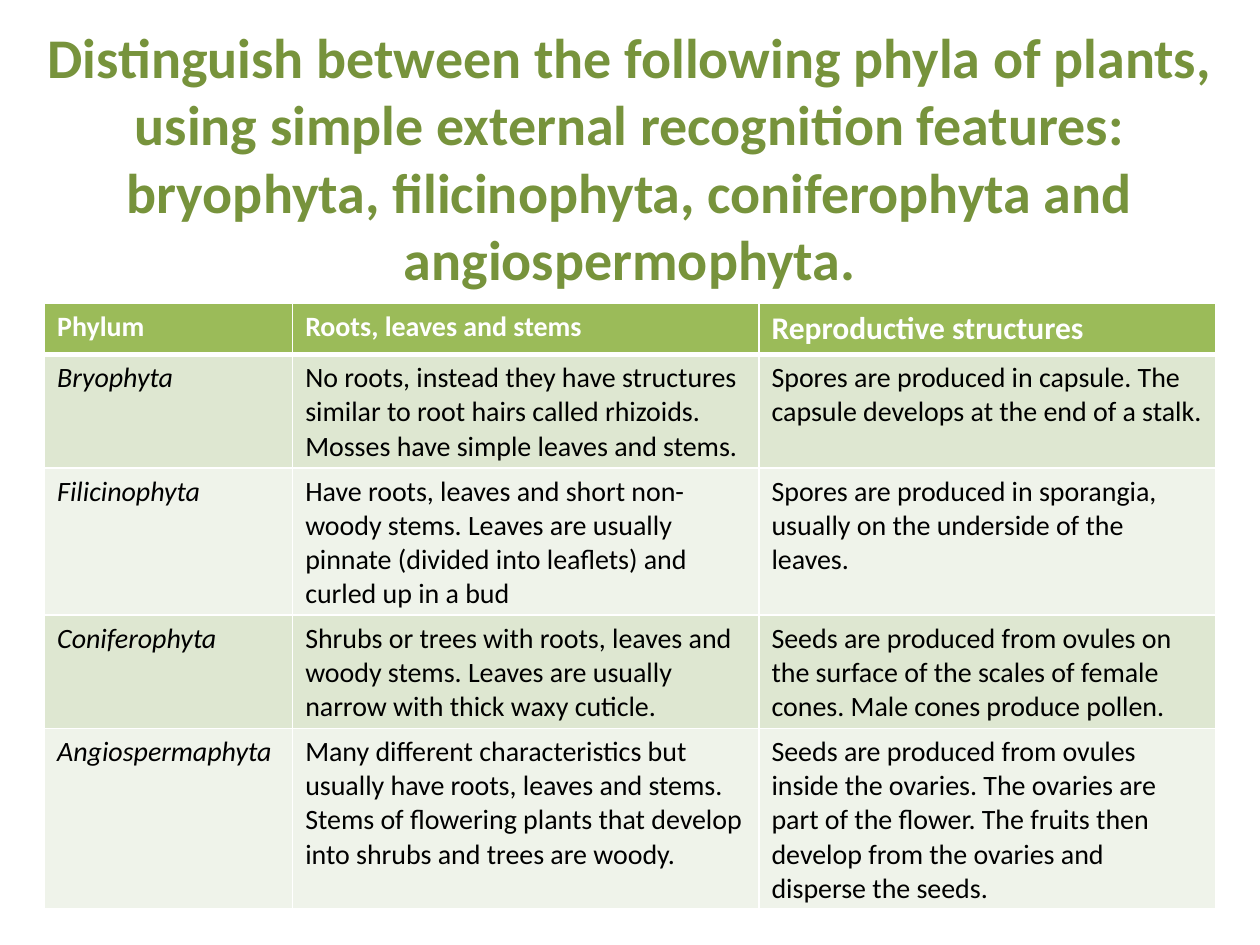
from pptx import Presentation
from pptx.dml.color import RGBColor
from pptx.enum.text import MSO_ANCHOR, MSO_AUTO_SIZE, PP_ALIGN
from pptx.oxml import parse_xml
from pptx.oxml.ns import nsdecls
from pptx.util import Cm, Pt

FONT = "Calibri"
WHITE = RGBColor(0xFF, 0xFF, 0xFF)
BLACK = RGBColor(0x00, 0x00, 0x00)
TITLE_GREEN = RGBColor(0x77, 0x93, 0x3C)
HEADER_GREEN = RGBColor(0x9B, 0xBB, 0x59)
BAND_FILLS = (RGBColor(0xDE, 0xE7, 0xD1), RGBColor(0xEF, 0xF3, 0xEA))

TITLE_LINES = (
    "Distinguish between the following phyla of plants, using simple external "
    "recognition features: bryophyta, filicinophyta, coniferophyta and",
    "angiospermophyta.",
)
COLUMN_WIDTHS = (5.0, 9.4, 9.2)
ROW_HEIGHT = 1.03
HEADERS = ("Phylum", "Roots, leaves and stems", "Reproductive structures")
HEADER_SIZES = (16, 16, 18)
PHYLA = (
    ("Bryophyta",
     "No roots, instead they have structures similar to root hairs called rhizoids. "
     "Mosses have simple leaves and stems.",
     "Spores are produced in capsule. The capsule develops at the end of a stalk."),
    ("Filicinophyta",
     "Have roots, leaves and short non-woody stems. Leaves are usually pinnate "
     "(divided into leaflets) and curled up in a bud",
     "Spores are produced in sporangia, usually on the underside of the leaves."),
    ("Coniferophyta",
     "Shrubs or trees with roots, leaves and woody stems. Leaves are usually narrow "
     "with thick waxy cuticle.",
     "Seeds are produced from ovules on the surface of the scales of female cones. "
     "Male cones produce pollen."),
    ("Angiospermaphyta",
     "Many different characteristics but usually have roots, leaves and stems. "
     "Stems of flowering plants that develop into shrubs and trees are woody.",
     "Seeds are produced from ovules inside the ovaries. The ovaries are part of the "
     "flower. The fruits then develop from the ovaries and disperse the seeds."),
)


def format_font(paragraph, size, color, bold=False, italic=False):
    font = paragraph.font
    font.name = FONT
    font.size = Pt(size)
    font.color.rgb = color
    font.bold = bold
    font.italic = italic


def add_title(slide):
    title = slide.shapes.title
    title.left, title.top, title.width, title.height = Cm(0.5), Cm(0.33), Cm(24.4), Cm(5.74)
    frame = title.text_frame
    frame.auto_size = MSO_AUTO_SIZE.SHAPE_TO_FIT_TEXT
    frame.word_wrap = True
    frame.vertical_anchor = MSO_ANCHOR.TOP
    frame.text = "\n".join(TITLE_LINES)
    for paragraph in frame.paragraphs:
        paragraph.alignment = PP_ALIGN.CENTER
        format_font(paragraph, 32, TITLE_GREEN, bold=True)


def set_borders(cell, top=1, bottom=1):
    properties = cell._tc.get_or_add_tcPr()
    for side, width in (("L", 1), ("R", 1), ("T", top), ("B", bottom)):
        properties.append(parse_xml(
            f'<a:ln{side} {nsdecls("a")} w="{Pt(width)}"><a:solidFill>'
            f'<a:srgbClr val="{WHITE}"/></a:solidFill></a:ln{side}>'))


def fill_cell(cell, text, fill):
    cell.fill.solid()
    cell.fill.fore_color.rgb = fill
    cell.text = text
    return cell.text_frame.paragraphs[0]


def add_phyla_table(slide):
    row_count = len(PHYLA) + 1
    table = slide.shapes.add_table(
        row_count, len(HEADERS), Cm(0.9), Cm(6.12),
        Cm(sum(COLUMN_WIDTHS)), Cm(ROW_HEIGHT * row_count)).table
    for column, width in zip(table.columns, COLUMN_WIDTHS):
        column.width = Cm(width)
    for row in table.rows:
        row.height = Cm(ROW_HEIGHT)
    for index, (text, size) in enumerate(zip(HEADERS, HEADER_SIZES)):
        cell = table.cell(0, index)
        set_borders(cell, bottom=3)
        format_font(fill_cell(cell, text, HEADER_GREEN), size, WHITE, bold=True)
    for row_index, phylum in enumerate(PHYLA, start=1):
        fill = BAND_FILLS[(row_index - 1) % 2]
        for index, text in enumerate(phylum):
            cell = table.cell(row_index, index)
            set_borders(cell, top=3 if row_index == 1 else 1)
            format_font(fill_cell(cell, text, fill), 16, BLACK, italic=index == 0)


def main():
    presentation = Presentation()
    presentation.slide_width = Cm(25.4)
    presentation.slide_height = Cm(19.05)
    slide = presentation.slides.add_slide(presentation.slide_layouts[5])
    add_title(slide)
    add_phyla_table(slide)
    presentation.save("out.pptx")


if __name__ == "__main__":
    main()
